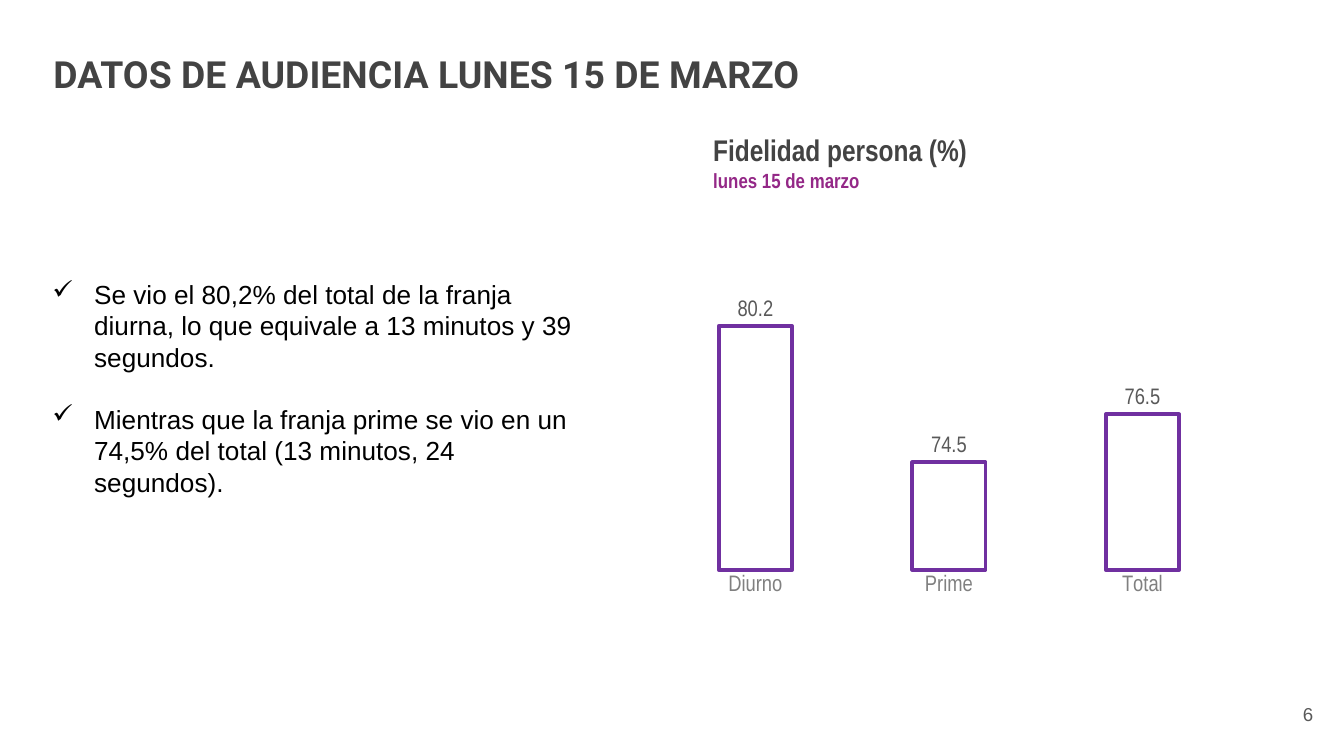
import pptx
import pptx.chart.data
import pptx.dml.color
import pptx.enum.chart
import pptx.enum.text
import pptx.util
from lxml import etree
from pptx.util import Cm

COLORS = {"heading": "434343", "date": "942887", "body": "000000",
          "label": "595959", "category": "808080", "bar": "7030A0"}
ALIGN = pptx.enum.text.PP_ALIGN
ANCHOR = pptx.enum.text.MSO_ANCHOR


def set_font(font, name, size, color, bold=False):
    font.name = name
    font.size = pptx.util.Pt(size)
    font.bold = bold
    font.color.rgb = pptx.dml.color.RGBColor.from_string(COLORS[color])


def add_frame(slide, box, inset=0.25, anchor=ANCHOR.TOP):
    """Add an empty wrapping text box and return its text frame."""
    frame = slide.shapes.add_textbox(*box).text_frame
    frame.word_wrap = True
    frame.vertical_anchor = anchor
    frame.margin_left = frame.margin_right = Cm(0.25)
    frame.margin_top = frame.margin_bottom = Cm(inset)
    return frame


def add_text(frame, text, *, font="Arial", size=14, color="body", bold=False,
             align=ALIGN.LEFT, before=0, bullet=None):
    """Write one paragraph, reusing the frame's first one while it is empty."""
    first = frame.paragraphs[0]
    paragraph = frame.add_paragraph() if first.runs else first
    paragraph.alignment = align
    paragraph.space_before = pptx.util.Pt(before)
    run = paragraph.add_run()
    run.text = text
    set_font(run.font, font, size, color, bold)
    if bullet:
        properties = paragraph._p.get_or_add_pPr()
        properties.set("marL", str(Cm(0.79)))
        properties.set("indent", str(-Cm(0.79)))
        etree.SubElement(properties, pptx.oxml.ns.qn("a:buChar"), char=bullet)


def add_heading(slide, box):
    add_text(add_frame(slide, box), "DATOS DE AUDIENCIA LUNES 15 DE MARZO",
             font="Roboto", size=20, color="heading", bold=True)


def add_findings(slide, box):
    frame = add_frame(slide, box, inset=0.13)
    add_text(frame, "Se vio el 80,2% del total de la franja diurna, "
             "lo que equivale a 13 minutos y 39 segundos.", bullet="✓")
    add_text(frame, "Mientras que la franja prime se vio en un 74,5% del total "
             "(13 minutos, 24 segundos).", bullet="✓", before=16.5)


def add_chart_title(slide, box):
    frame = add_frame(slide, box)
    add_text(frame, "Fidelidad persona (%)", font="Arial Narrow", size=16,
             color="heading", bold=True)
    add_text(frame, "lunes 15 de marzo", font="Arial Narrow", size=11,
             color="date", bold=True)


def set_plot_area(chart, **fractions):
    """Fix the inner plot area as fractions (x, y, w, h) of the chart."""
    qn = pptx.oxml.ns.qn
    area = chart._chartSpace.chart.plotArea
    for old in area.findall(qn("c:layout")):
        area.remove(old)
    layout = etree.Element(qn("c:layout"))
    area.insert(0, layout)
    manual = etree.SubElement(layout, qn("c:manualLayout"))
    settings = {"layoutTarget": "inner", "xMode": "edge", "yMode": "edge", **fractions}
    for tag, value in settings.items():
        etree.SubElement(manual, qn(f"c:{tag}"), val=str(value))


def add_loyalty_chart(slide, box):
    loyalty = pptx.chart.data.CategoryChartData(number_format="0.0")
    loyalty.categories = ["Diurno", "Prime", "Total"]
    loyalty.add_series("Fidelidad", [80.2, 74.5, 76.5])
    chart = slide.shapes.add_chart(
        pptx.enum.chart.XL_CHART_TYPE.COLUMN_CLUSTERED, *box, loyalty).chart
    chart.has_legend = chart.has_title = False
    set_font(chart.font, "Arial Narrow", 10, "body")

    values = chart.value_axis
    values.minimum_scale, values.maximum_scale, values.major_unit = 70, 85, 5
    values.has_major_gridlines = False
    values.visible = False

    categories = chart.category_axis
    categories.major_tick_mark = pptx.enum.chart.XL_TICK_MARK.NONE
    categories.format.line.fill.background()
    set_font(categories.tick_labels.font, "Arial Narrow", 12, "category")

    plot = chart.plots[0]
    plot.vary_by_categories = False
    plot.gap_width, plot.overlap = 164, -35
    plot.has_data_labels = True
    labels = plot.data_labels
    labels.show_value = True
    labels.number_format, labels.number_format_is_linked = "0.0", False
    labels.position = pptx.enum.chart.XL_LABEL_POSITION.OUTSIDE_END
    set_font(labels.font, "Arial Narrow", 12, "label")

    bars = plot.series[0].format
    bars.fill.background()
    bars.line.color.rgb = pptx.dml.color.RGBColor.from_string(COLORS["bar"])
    bars.line.width = pptx.util.Pt(2)
    set_plot_area(chart, x=0.02, y=0.02, w=0.96, h=0.89)


def add_page_number(slide, box):
    add_text(add_frame(slide, box, anchor=ANCHOR.MIDDLE), "6",
             size=10, color="label", align=ALIGN.RIGHT)


def main():
    deck = pptx.Presentation()
    deck.slide_width, deck.slide_height = Cm(25.4), Cm(14.29)
    slide = deck.slides.add_slide(deck.slide_layouts[6])
    add_page_number(slide, (Cm(23.55), Cm(12.95), Cm(1.52), Cm(1.09)))
    add_chart_title(slide, (Cm(13.23), Cm(2.24), Cm(9.4), Cm(2)))
    add_heading(slide, (Cm(0.76), Cm(0.71), Cm(21.3), Cm(1.57)))
    add_findings(slide, (Cm(0.74), Cm(5.13), Cm(10.67), Cm(4.45)))
    add_loyalty_chart(slide, (Cm(12.22), Cm(3.84), Cm(11.43), Cm(7.62)))
    deck.save("out.pptx")


if __name__ == "__main__":
    main()
